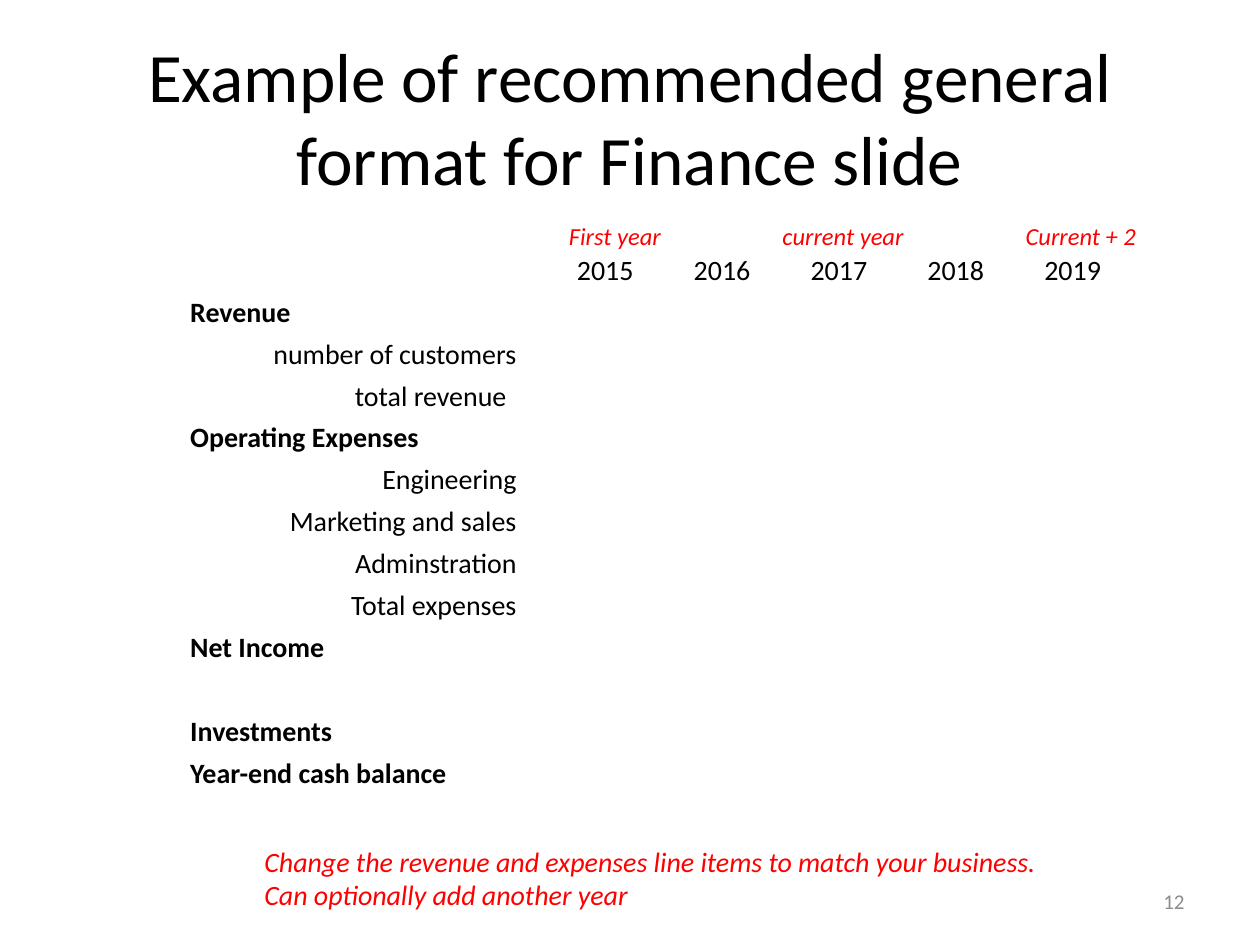
from dataclasses import dataclass
from typing import NamedTuple

from lxml.etree import SubElement
from pptx import Presentation
from pptx.dml.color import RGBColor as Color
from pptx.enum.text import MSO_ANCHOR as Anchor, PP_ALIGN as Align
from pptx.oxml.ns import qn
from pptx.util import Pt


@dataclass(frozen=True)
class Theme:
    font: str = "Calibri"
    ink: Color = Color(0, 0, 0)
    accent: Color = Color(0xFF, 0, 0)
    muted: Color = Color(0x8C, 0x8C, 0x8C)
    title: float = 39.6
    body: float = 16
    caption: float = 14
    number: float = 12


class Area(NamedTuple):
    left: float
    top: float
    width: float
    height: float


class Label(NamedTuple):
    text: str
    heading: bool = False
    right_margin: float = 0.72


THEME = Theme()
YEARS = range(2015, 2020)
LABELS = [
    Label("Revenue", heading=True),
    Label("number of customers"),
    Label("total revenue", right_margin=6.5),
    Label("Operating Expenses", heading=True),
    Label("Engineering"),
    Label("Marketing and sales"),
    Label("Adminstration"),
    Label("Total expenses"),
    Label("Net Income", heading=True),
    Label(""),
    Label("Investments", heading=True),
    Label("Year-end cash balance", heading=True),
]
LABEL_WIDTH, YEAR_WIDTH, ROW_HEIGHT = 187.9, 66.8, 24
CAPTION_STOPS = (122, 261)


def format_para(para, size: float, color: Color = THEME.ink, align=Align.LEFT,
                bold: bool = False, italic: bool = False) -> None:
    para.alignment = align
    for span in para.runs:
        font = span.font
        font.name, font.size = THEME.font, Pt(size)
        font.bold, font.italic = bold, italic
        font.color.rgb = color


def place(shape, area: Area) -> None:
    shape.left, shape.top, shape.width, shape.height = map(Pt, area)


def add_text(page, area: Area, text: str, size: float, color: Color,
             align=Align.LEFT, anchor=Anchor.TOP, italic: bool = False):
    box = page.shapes.add_textbox(*map(Pt, area))
    frame = box.text_frame
    frame.word_wrap = True
    frame.vertical_anchor = anchor
    frame.text = text
    para = frame.paragraphs[0]
    format_para(para, size, color, align, italic=italic)
    return para


def add_tab_stops(para, stops: tuple[float, ...]) -> None:
    tabs = SubElement(para._p.get_or_add_pPr(), qn("a:tabLst"))
    for stop in stops:
        SubElement(tabs, qn("a:tab"), pos=str(Pt(stop)), algn="l")


def fill_cell(cell, label: Label) -> None:
    cell.fill.background()
    cell.vertical_anchor = Anchor.BOTTOM
    cell.margin_left = cell.margin_top = Pt(0.72)
    cell.margin_right, cell.margin_bottom = Pt(label.right_margin), Pt(3.6)
    para = cell.text_frame.paragraphs[0]
    if label.text:
        para.text = label.text
        align = Align.LEFT if label.heading else Align.RIGHT
        format_para(para, THEME.body, align=align, bold=label.heading)
    else:
        # Keeps empty cells from stretching their row
        SubElement(para._p, qn("a:endParaRPr"), sz=str(THEME.body * 100))


def add_finance_table(page) -> None:
    rows = [[Label("")] + [Label(str(year)) for year in YEARS]]
    rows += [[label] + [Label("")] * len(YEARS) for label in LABELS]
    area = Area(108, 144, LABEL_WIDTH + YEAR_WIDTH * len(YEARS), ROW_HEIGHT * len(rows))
    table = page.shapes.add_table(len(rows), len(rows[0]), *map(Pt, area)).table
    table.first_row = table.horz_banding = False
    for index, column in enumerate(table.columns):
        column.width = Pt(YEAR_WIDTH if index else LABEL_WIDTH)
    for row, labels in zip(table.rows, rows):
        row.height = Pt(ROW_HEIGHT)
        for cell, label in zip(row.cells, labels):
            fill_cell(cell, label)


def main() -> None:
    deck = Presentation()
    deck.slide_width, deck.slide_height = Pt(720), Pt(540)
    page = deck.slides.add_slide(deck.slide_layouts[5])

    # Title
    title = page.shapes.title
    place(title, Area(36, 21.6, 648, 90))
    title.text_frame.text = "Example of recommended general format for Finance slide"
    title.text_frame.vertical_anchor = Anchor.MIDDLE
    format_para(title.text_frame.paragraphs[0], THEME.title, align=Align.CENTER)

    # Page number
    add_text(page, Area(516, 500.5, 168, 28.8), "12", THEME.number, THEME.muted,
             Align.RIGHT, Anchor.MIDDLE)

    # Line items by year
    add_finance_table(page)

    # Advice below the table and captions above the years
    add_text(page, Area(144, 478.8, 474, 46), "Change the revenue and expenses line items "
             "to match your business. Can optionally add another year",
             THEME.body, THEME.accent, italic=True)
    captions = add_text(page, Area(318, 123, 340, 24.2),
                        "First year\tcurrent year\tCurrent + 2",
                        THEME.caption, THEME.accent, italic=True)
    add_tab_stops(captions, CAPTION_STOPS)

    deck.save("out.pptx")


if __name__ == "__main__":
    main()
